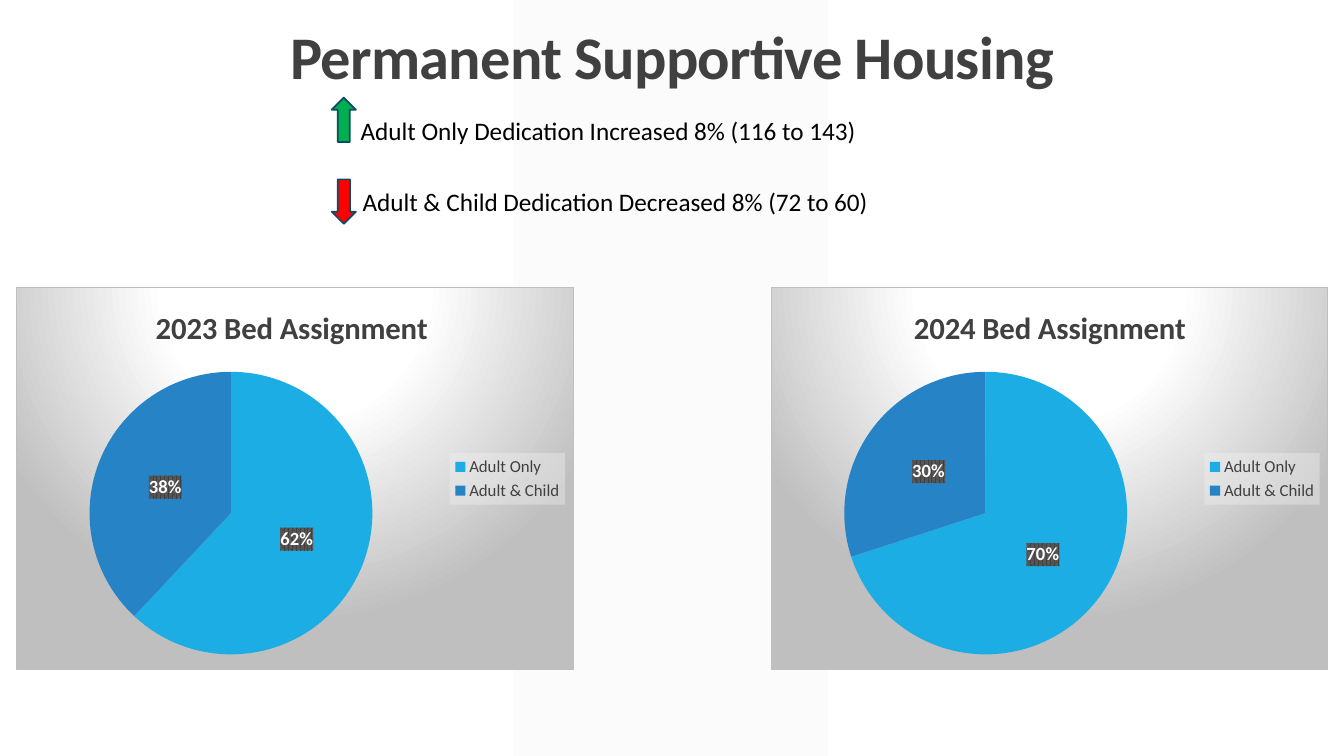
import pptx
import pptx.chart.data
import pptx.dml.color
import pptx.enum.chart
import pptx.enum.shapes
import pptx.enum.text
import pptx.oxml
import pptx.oxml.ns
import pptx.util
from dataclasses import dataclass

# Content
HEADING = "Permanent Supportive Housing"
CATEGORIES = ("Adult Only", "Adult & Child")
ASSIGNMENTS = [
    {"title": "2023 Bed Assignment ", "percents": (62, 38)},
    {"title": "2024 Bed Assignment", "percents": (70, 30)},
]
# text, text box (left, top, width, height), arrow top, arrow rotation, theme colour
CHANGES = [
    ("Adult Only Dedication Increased 8% (116 to 143)",
     (8.84, 2.79, 16.92, 1.02), 2.46, 0, "rise"),
    ("Adult & Child Dedication Decreased 8% (72 to 60)",
     (8.89, 4.57, 16.1, 1.02), 4.52, 180, "fall"),
]


@dataclass(frozen=True)
class Theme:
    font: str = "Calibri"
    ink: str = "404040"
    black: str = "000000"
    white: str = "FFFFFF"
    pale: str = "F2F2F2"
    grey: str = "BFBFBF"
    label_back: str = "595959"
    arrow_edge: str = "0C4C64"
    rise: str = "00B050"
    fall: str = "FF0000"
    slices: tuple = ("1CADE4", "2683C6")
    heading_size: float = 43.2
    chart_title_size: float = 22
    change_size: float = 18
    label_size: float = 13.3
    legend_size: float = 12
    chart_size: float = 10


THEME = Theme()

# Layout, in centimetres
SLIDE_W, SLIDE_H = 33.87, 19.05
BAND = (12.95, 0, 7.92, SLIDE_H)
HEADING_BOX = (0, 0.43, SLIDE_W, 2.03)
ARROW_LEFT, ARROW_W, ARROW_H = 8.36, 0.61, 1.12
CHART_LEFT, CHART_TOP, CHART_W, CHART_H, CHART_STEP = 0.41, 7.24, 14.05, 9.65, 19.02
PIE_AREA = {"x": 0.13, "y": 0.22, "w": 0.51, "h": 0.74}  # shares of the chart


def cm(box):
    return [pptx.util.Cm(length) for length in box]


def rgb(colour):
    return pptx.dml.color.RGBColor.from_string(colour)


def apply(target, values):
    for name, value in values.items():
        setattr(target, name, value)


def style_font(font, size, colour, bold=False):
    apply(font, {"name": THEME.font, "size": pptx.util.Pt(size), "bold": bold})
    font.color.rgb = rgb(colour)


def xml(tag, inner):
    return pptx.oxml.parse_xml(
        f'<{tag} {pptx.oxml.ns.nsdecls("c", "a")}>{inner}</{tag}>')


def child(parent, tag):
    return parent.find(pptx.oxml.ns.qn(tag))


def add_shape(slide, kind, box, colour, edge=None):
    shape = slide.shapes.add_shape(kind, *cm(box))
    shape.shadow.inherit = False
    shape.fill.solid()
    shape.fill.fore_color.rgb = rgb(colour)
    if edge:
        shape.line.color.rgb = rgb(edge)
        shape.line.width = pptx.util.Pt(1.25)
    else:
        shape.line.fill.background()
    return shape


def add_text(slide, box, text, size, colour, bold=False):
    frame = slide.shapes.add_textbox(*cm(box)).text_frame
    frame.word_wrap = True
    run = frame.paragraphs[0].add_run()
    run.text = text
    style_font(run.font, size, colour, bold)
    return frame


def add_pie(slide, left, assignment):
    data = pptx.chart.data.CategoryChartData()
    data.categories = CATEGORIES
    data.add_series(assignment["title"], assignment["percents"])
    chart = slide.shapes.add_chart(
        pptx.enum.chart.XL_CHART_TYPE.PIE,
        *cm((left, CHART_TOP, CHART_W, CHART_H)), data).chart
    style_font(chart.font, THEME.chart_size, THEME.black)

    # Title and legend
    apply(chart, {"has_title": True, "has_legend": True})
    run = chart.chart_title.text_frame.paragraphs[0].add_run()
    run.text = assignment["title"]
    style_font(run.font, THEME.chart_title_size, THEME.ink, True)
    apply(chart.legend, {"position": pptx.enum.chart.XL_LEGEND_POSITION.RIGHT,
                         "include_in_layout": False})
    style_font(chart.legend.font, THEME.legend_size, THEME.ink)

    # Slices and percentage labels
    plot = chart.plots[0]
    plot.vary_by_categories = True
    series = plot.series[0]
    for index, colour in enumerate(THEME.slices):
        fill = series.points[index].format.fill
        fill.solid()
        fill.fore_color.rgb = rgb(colour)
    labels = series.data_labels
    apply(labels, {"show_percentage": True, "show_value": False,
                   "number_format": "0%", "number_format_is_linked": False,
                   "position": pptx.enum.chart.XL_LABEL_POSITION.CENTER})
    style_font(labels.font, THEME.label_size, THEME.white, True)

    # Backgrounds of the chart, legend and labels
    stops = "".join(
        f'<a:gs pos="{share * 1000}"><a:srgbClr val="{colour}"/></a:gs>'
        for share, colour in ((0, THEME.white), (39, THEME.white), (100, THEME.grey)))
    space = chart._chartSpace
    child(space, "c:chart").addnext(xml("c:spPr", (
        f'<a:gradFill><a:gsLst>{stops}</a:gsLst><a:path path="circle">'
        '<a:fillToRect l="50000" t="-80000" r="50000" b="180000"/></a:path></a:gradFill>'
        f'<a:ln w="9525"><a:solidFill><a:srgbClr val="{THEME.grey}"/></a:solidFill></a:ln>')))
    child(chart.legend._element, "c:overlay").addnext(xml("c:spPr", (
        f'<a:solidFill><a:srgbClr val="{THEME.pale}"><a:alpha val="39000"/>'
        '</a:srgbClr></a:solidFill>')))
    child(labels._element, "c:numFmt").addnext(xml("c:spPr", (
        f'<a:pattFill prst="pct75"><a:fgClr><a:srgbClr val="{THEME.ink}"/></a:fgClr>'
        f'<a:bgClr><a:srgbClr val="{THEME.label_back}"/></a:bgClr></a:pattFill>')))

    # Place of the pie inside the chart
    plot_area = child(child(space, "c:chart"), "c:plotArea")
    old_layout = child(plot_area, "c:layout")
    if old_layout is not None:
        plot_area.remove(old_layout)
    places = '<c:layoutTarget val="inner"/><c:xMode val="edge"/><c:yMode val="edge"/>'
    places += "".join(f'<c:{key} val="{share}"/>' for key, share in PIE_AREA.items())
    plot_area.insert(0, xml("c:layout", f"<c:manualLayout>{places}</c:manualLayout>"))


def main():
    deck = pptx.Presentation()
    apply(deck, {"slide_width": pptx.util.Cm(SLIDE_W),
                 "slide_height": pptx.util.Cm(SLIDE_H)})
    slide = deck.slides.add_slide(deck.slide_layouts[6])
    kinds = pptx.enum.shapes.MSO_SHAPE

    # Pale band behind everything
    band = add_shape(slide, kinds.PARALLELOGRAM, BAND, THEME.pale)
    band.adjustments[0] = 0
    colour = next(band._element.spPr.iter(pptx.oxml.ns.qn("a:srgbClr")))
    colour.append(xml("a:alpha", ""))
    colour[-1].set("val", "30000")

    # Heading
    heading = add_text(slide, HEADING_BOX, HEADING, THEME.heading_size, THEME.ink, True)
    heading.vertical_anchor = pptx.enum.text.MSO_ANCHOR.BOTTOM
    line = heading.paragraphs[0]
    apply(line, {"alignment": pptx.enum.text.PP_ALIGN.CENTER, "line_spacing": 0.9})
    line.runs[0]._r.get_or_add_rPr().set("spc", "-50")

    # Pie charts
    for index, assignment in enumerate(ASSIGNMENTS):
        add_pie(slide, CHART_LEFT + index * CHART_STEP, assignment)

    # Changes with their arrows
    for text, box, arrow_top, rotation, direction in CHANGES:
        add_text(slide, box, text, THEME.change_size, THEME.black)
        arrow = add_shape(slide, kinds.UP_ARROW, (ARROW_LEFT, arrow_top, ARROW_W, ARROW_H),
                          getattr(THEME, direction), THEME.arrow_edge)
        arrow.rotation = rotation

    deck.save("out.pptx")


if __name__ == "__main__":
    main()
